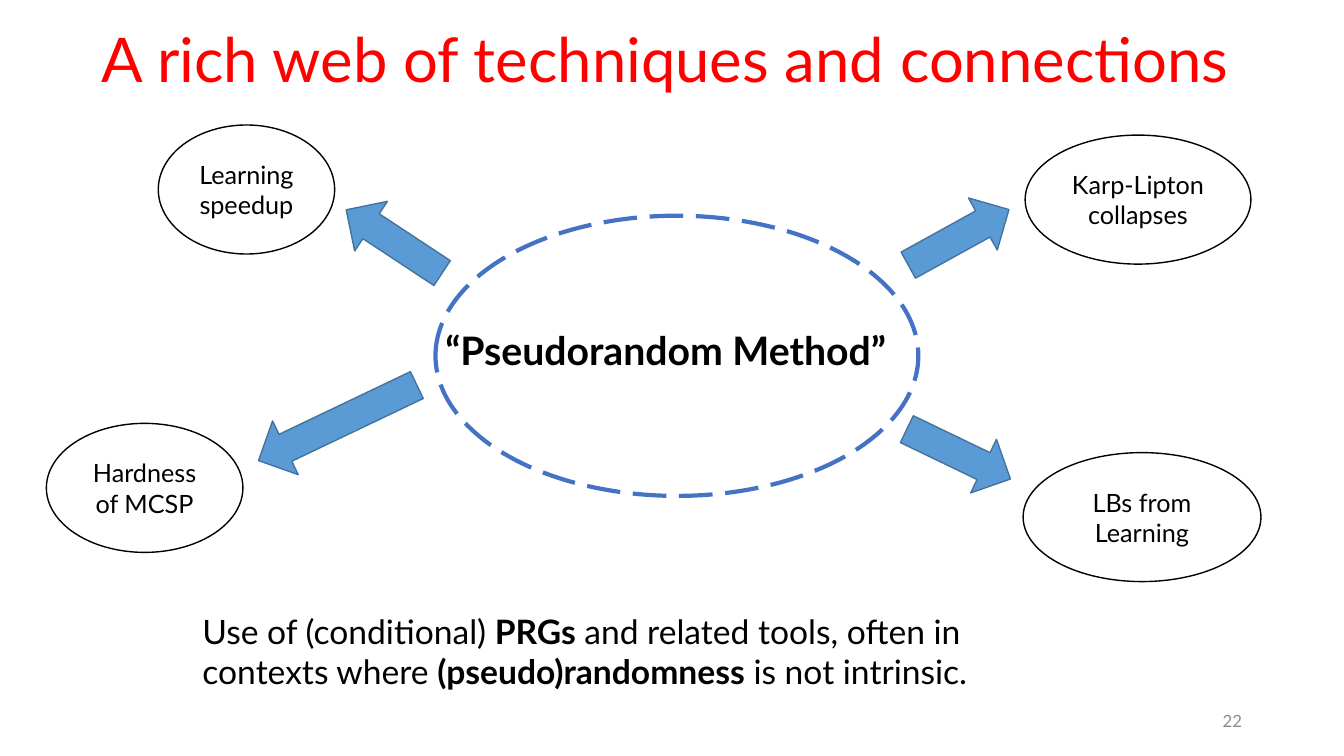
from pptx import Presentation
from pptx.dml.color import RGBColor
from pptx.enum.dml import MSO_LINE
from pptx.enum.shapes import MSO_SHAPE
from pptx.enum.text import MSO_ANCHOR, PP_ALIGN
from pptx.util import Inches, Pt

CELL = 0.1  # side of one square grid cell, in inches
COLUMNS, ROWS = 133.33, 75


def colour(code):
    return RGBColor.from_string(code)


def cells(*counts):
    return [Inches(count * CELL) for count in counts]


class SlideBuilder:
    """Holds the style and the current page; places are in grid cells."""

    font = "Lato"
    ink, paper = "000000", "FFFFFF"
    arrow_fill, arrow_line = "5B9BD5", "43739E"

    def __init__(self, page):
        self.page = page

    def fill_text(self, box, spans, size, ink=None, bold=False,
                  align=PP_ALIGN.LEFT, anchor=MSO_ANCHOR.TOP, spacing=1.0):
        """Fill a box with one paragraph of (text, bold) spans."""
        frame = box.text_frame
        frame.word_wrap = True
        frame.vertical_anchor = anchor
        para = frame.paragraphs[0]
        para.alignment = align
        para.line_spacing = spacing
        para.font.name = self.font
        para.font.size = Pt(size)
        para.font.bold = bold
        para.font.color.rgb = colour(ink or self.ink)
        for words, strong in spans:
            span = para.add_run()
            span.text = words
            if strong:
                span.font.bold = True

    def text(self, place, spans, size, **style):
        box = self.page.shapes.add_textbox(*cells(*place))
        self.fill_text(box, spans, size, **style)

    def shape(self, kind, place, fill, line, weight=1):
        shape = self.page.shapes.add_shape(kind, *cells(*place))
        shape.shadow.inherit = False
        shape.fill.solid()
        shape.fill.fore_color.rgb = colour(fill)
        shape.line.color.rgb = colour(line)
        shape.line.width = Pt(weight)
        return shape

    def hub(self, place, line):
        ring = self.shape(MSO_SHAPE.OVAL, place, self.paper, line, 3)
        ring.line.dash_style = MSO_LINE.LONG_DASH

    def topic(self, place, label):
        oval = self.shape(MSO_SHAPE.OVAL, place, self.paper, self.ink)
        self.fill_text(oval, [(label, False)], 18,
                       align=PP_ALIGN.CENTER, anchor=MSO_ANCHOR.MIDDLE)

    def arrow(self, left, top, length, angle):
        arrow = self.shape(MSO_SHAPE.RIGHT_ARROW, (left, top, length, 5.9),
                           self.arrow_fill, self.arrow_line)
        arrow.rotation = angle


def main():
    deck = Presentation()
    deck.slide_width, deck.slide_height = cells(COLUMNS, ROWS)
    builder = SlideBuilder(deck.slides.add_slide(deck.slide_layouts[6]))

    # Central method
    builder.hub((43.2, 21.4, 47.9, 27.8), "4472C4")

    # Title, method name and page number
    builder.text((9.1, 0.4, 118.5, 11.7),
                 [("A rich web of techniques and connections", False)], 44,
                 ink="FF0000", anchor=MSO_ANCHOR.MIDDLE, spacing=0.9)
    builder.text((43.2, 32.4, 52.7, 7.1),
                 [("“Pseudorandom Method”", False)], 28, bold=True, spacing=0.9)
    builder.text((94.2, 69.5, 30, 4), [("22", False)], 12, ink="8C8C8C",
                 align=PP_ALIGN.RIGHT, anchor=MSO_ANCHOR.MIDDLE)

    # Closing remark
    builder.text((19.1, 60.1, 83.9, 9.1), [
        ("Use of (conditional) ", False),
        ("PRGs", True),
        (" and related tools, often in contexts where ", False),
        ("(pseudo)randomness", True),
        (" is not intrinsic.", False),
    ], 24)

    # Arrows from the method to each topic: left, top, length, angle
    for arrow in [
        (89.4, 20.6, 11.4, 331.1),
        (89.4, 42.1, 11.4, 25.7),
        (33.4, 21, 11.4, 213.4),
        (24.8, 39, 17.4, 154.5),
    ]:
        builder.arrow(*arrow)

    # Topics around the method: left, top, width
    for left, top, width, label in [
        (15.7, 12.4, 17.5, "Learning speedup"),
        (4.6, 42, 19.5, "Hardness of MCSP"),
        (101.7, 13.4, 22.4, "Karp-Lipton collapses"),
        (101.5, 44.9, 23.6, "LBs from Learning"),
    ]:
        builder.topic((left, top, width, 12.8), label)

    deck.save("out.pptx")


if __name__ == "__main__":
    main()
